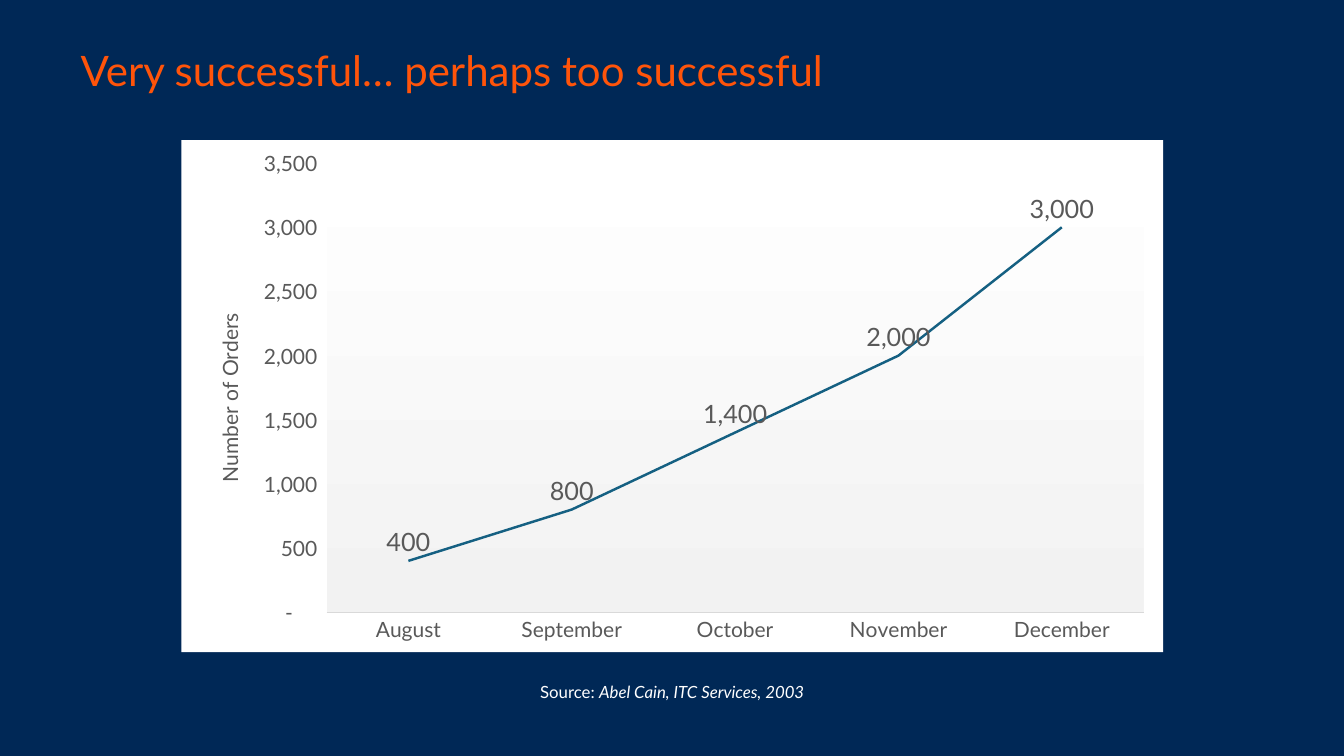
from dataclasses import dataclass

from lxml.etree import SubElement
from pptx import Presentation
from pptx.chart.data import CategoryChartData
from pptx.dml.color import RGBColor
from pptx.enum.chart import XL_CHART_TYPE, XL_LABEL_POSITION, XL_TICK_MARK
from pptx.enum.text import MSO_ANCHOR, PP_ALIGN
from pptx.oxml import parse_xml
from pptx.oxml.ns import nsdecls, qn
from pptx.util import Pt

NAVY = RGBColor(0x00, 0x28, 0x56)
ORANGE = RGBColor(0xFF, 0x54, 0x0A)
WHITE = RGBColor(0xFF, 0xFF, 0xFF)
GREY = RGBColor(0x59, 0x59, 0x59)
AXIS_GREY = RGBColor(0xD9, 0xD9, 0xD9)
PLOT_GREY = RGBColor(0xF2, 0xF2, 0xF2)
BLUE = RGBColor(0x15, 0x60, 0x82)
FONT = "Lato"
ORDER_FORMAT = '_-* #,##0_-;\\-* #,##0_-;_-* "-"??_-;_-@_'


@dataclass
class MonthlyOrders:
    month: str
    orders: int


@dataclass
class Span:
    text: str
    size: float
    color: RGBColor
    italic: bool = False


@dataclass
class Area:
    """Left, top, width and height in points."""
    left: float
    top: float
    width: float
    height: float


ORDERS = [
    MonthlyOrders("August", 400),
    MonthlyOrders("September", 800),
    MonthlyOrders("October", 1400),
    MonthlyOrders("November", 2000),
    MonthlyOrders("December", 3000),
]
TITLE_AREA = Area(50.4, 28.1, 823, 43.9)
CHART_AREA = Area(129.6, 100.1, 701.3, 365.8)
SOURCE_AREA = Area(129.6, 483.1, 701.3, 21.8)


def style_font(font, size: float, color: RGBColor) -> None:
    font.name = FONT
    font.size = Pt(size)
    font.color.rgb = color


def place(box, area: Area) -> None:
    box.left, box.top = Pt(area.left), Pt(area.top)
    box.width, box.height = Pt(area.width), Pt(area.height)


def write_line(box, spans: list[Span], alignment: PP_ALIGN) -> None:
    frame = box.text_frame
    frame.word_wrap = True
    frame.vertical_anchor = MSO_ANCHOR.MIDDLE
    para = frame.paragraphs[0]
    para.alignment = alignment
    for span in spans:
        run = para.add_run()
        run.text = span.text
        style_font(run.font, span.size, span.color)
        run.font.italic = span.italic


def set_layout(parent, index: int, **settings: str | float) -> None:
    """Give a chart part a manual position, in fractions of the chart."""
    for existing in parent.findall(qn("c:layout")):
        parent.remove(existing)
    layout = parse_xml(f"<c:layout {nsdecls('c')}><c:manualLayout/></c:layout>")
    for name, value in settings.items():
        SubElement(layout[0], qn(f"c:{name}"), val=str(value))
    parent.insert(index, layout)


def fill_chart(chart) -> None:
    """White chart background and a grey gradient behind the plot."""
    chart_element = chart._chartSpace.find(qn("c:chart"))
    chart_element.addnext(parse_xml(
        f"<c:spPr {nsdecls('c', 'a')}><a:solidFill><a:srgbClr val='{WHITE}'/></a:solidFill>"
        "<a:ln><a:noFill/></a:ln></c:spPr>"))
    plot_area = chart_element.find(qn("c:plotArea"))
    plot_area.append(parse_xml(
        f"<c:spPr {nsdecls('c', 'a')}><a:gradFill><a:gsLst>"
        f"<a:gs pos='0'><a:srgbClr val='{WHITE}'/></a:gs>"
        f"<a:gs pos='100000'><a:srgbClr val='{PLOT_GREY}'/></a:gs>"
        "</a:gsLst><a:lin ang='5400000' scaled='0'/></a:gradFill>"
        "<a:ln><a:noFill/></a:ln></c:spPr>"))
    set_layout(plot_area, 0, layoutTarget="inner", xMode="edge", yMode="edge",
               x=0.148, y=0.045, w=0.832, h=0.877)


def format_axes(chart) -> None:
    months, values = chart.category_axis, chart.value_axis
    for axis in (months, values):
        axis.major_tick_mark = axis.minor_tick_mark = XL_TICK_MARK.NONE
        axis.has_major_gridlines = False
        style_font(axis.tick_labels.font, 15, GREY)
    months.format.line.color.rgb = AXIS_GREY
    months.format.line.width = Pt(0.75)

    values.format.line.fill.background()
    values.minimum_scale, values.maximum_scale = 0, 3500
    values.major_unit = 500
    values.tick_labels.number_format = ORDER_FORMAT
    values.tick_labels.number_format_is_linked = False
    if values._element.find(qn("c:crossBetween")) is None:
        values._element.find(qn("c:crosses")).addnext(
            parse_xml(f"<c:crossBetween {nsdecls('c')} val='between'/>"))

    # Rotated axis title
    title = values.axis_title
    run = title.text_frame.paragraphs[0].add_run()
    run.text = "Number of Orders"
    style_font(run.font, 15, GREY)
    run.font.bold = False
    body = next(title._element.iter(qn("a:bodyPr")))
    body.set("rot", "-5400000")
    body.set("vert", "horz")
    set_layout(title._element, 1, xMode="edge", yMode="edge", x=0.03, y=0.33)


def add_orders_chart(page) -> None:
    data = CategoryChartData()
    data.categories = [entry.month for entry in ORDERS]
    data.add_series("Series 1", [entry.orders for entry in ORDERS])
    area = CHART_AREA
    chart = page.shapes.add_chart(
        XL_CHART_TYPE.LINE, Pt(area.left), Pt(area.top),
        Pt(area.width), Pt(area.height), data).chart
    chart.has_title = False
    chart.has_legend = False
    style_font(chart.font, 15, GREY)
    fill_chart(chart)
    format_axes(chart)

    # Orders line and its labels
    chart.plots[0].vary_by_categories = False
    series = chart.plots[0].series[0]
    series.smooth = False
    series.format.line.color.rgb = BLUE
    series.format.line.width = Pt(1.75)
    labels = series.data_labels
    labels.show_value = True
    labels.position = XL_LABEL_POSITION.ABOVE
    labels.number_format = ORDER_FORMAT
    labels.number_format_is_linked = False
    style_font(labels.font, 18, GREY)


def main() -> None:
    deck = Presentation()
    deck.slide_width, deck.slide_height = Pt(960), Pt(540)
    page = deck.slides.add_slide(deck.slide_layouts[5])
    page.background.fill.solid()
    page.background.fill.fore_color.rgb = NAVY

    # Title
    title = page.shapes.title
    place(title, TITLE_AREA)
    write_line(title, [Span("Very successful… perhaps too successful", 30, ORANGE)],
               PP_ALIGN.LEFT)

    # Chart
    add_orders_chart(page)

    # Source line
    source = page.shapes.add_textbox(0, 0, 0, 0)
    place(source, SOURCE_AREA)
    write_line(source, [Span("Source: ", 12, WHITE),
                        Span("Abel Cain, ITC Services, 2003", 12, WHITE, italic=True)],
               PP_ALIGN.CENTER)

    deck.save("out.pptx")


if __name__ == "__main__":
    main()
